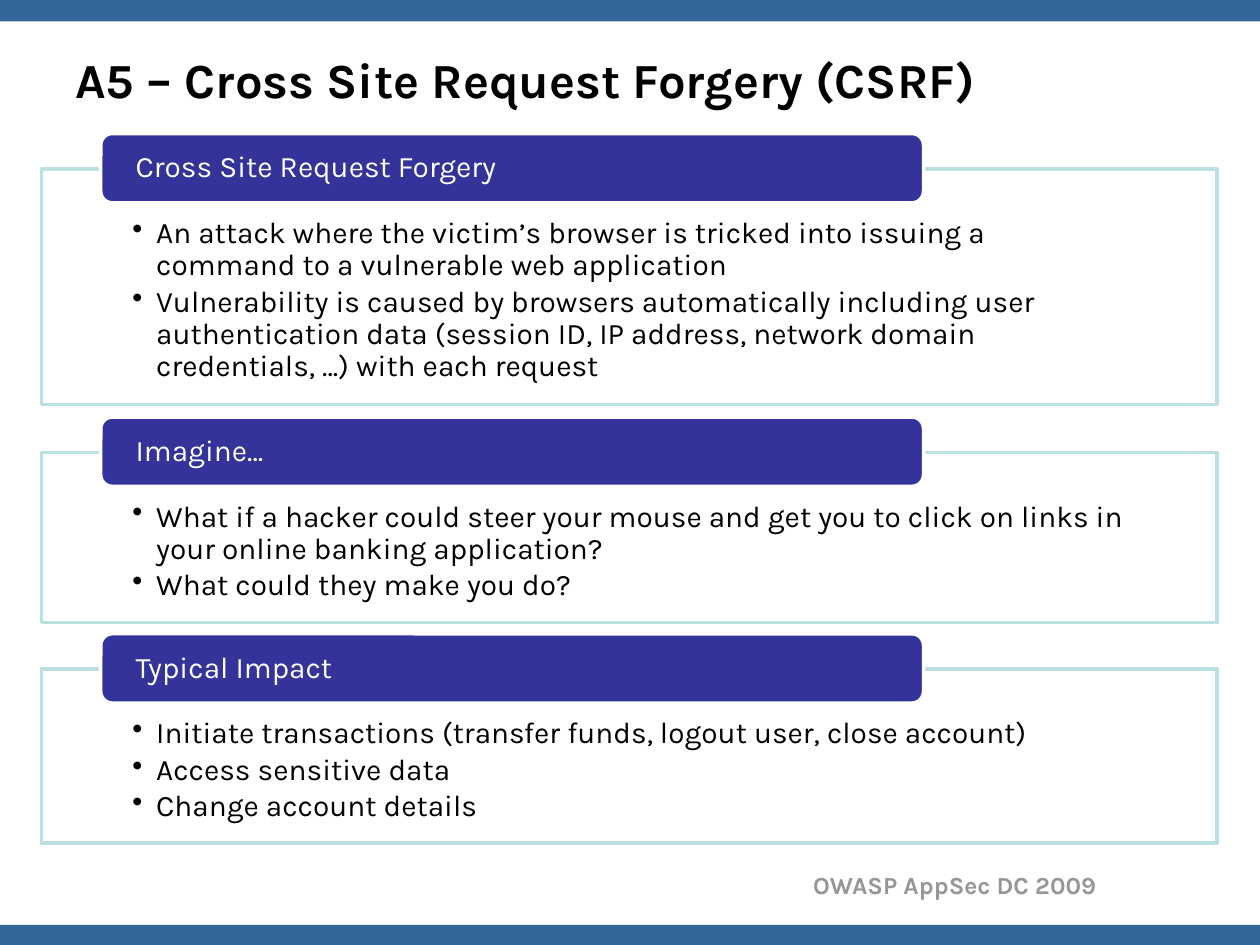
import pptx
import pptx.dml.color
import pptx.enum.shapes
import pptx.enum.text
import pptx.oxml.ns
import pptx.util
from lxml import etree
from pptx.util import Inches

RECT = pptx.enum.shapes.MSO_SHAPE.RECTANGLE
ROUNDED = pptx.enum.shapes.MSO_SHAPE.ROUNDED_RECTANGLE
TOP = pptx.enum.text.MSO_ANCHOR.TOP
MIDDLE = pptx.enum.text.MSO_ANCHOR.MIDDLE
LEFT = pptx.enum.text.PP_ALIGN.LEFT
RIGHT = pptx.enum.text.PP_ALIGN.RIGHT

SECTIONS = [
    # heading, top of the frame, height of the frame, points
    ("Cross Site Request Forgery", 1.34, 1.87, [
        "An attack where the victim’s browser is tricked into issuing a "
        "command to a vulnerable web application",
        "Vulnerability is caused by browsers automatically including user "
        "authentication data (session ID, IP address, network domain "
        "credentials, …) with each request",
    ]),
    ("Imagine…", 3.59, 1.35, [
        "What if a hacker could steer your mouse and get you to click on "
        "links in your online banking application?",
        "What could they make you do?",
    ]),
    ("Typical Impact", 5.31, 1.38, [
        "Initiate transactions (transfer funds, logout user, close account)",
        "Access sensitive data",
        "Change account details",
    ]),
]


def rgb(hex_color):
    return pptx.dml.color.RGBColor.from_string(hex_color)


class Deck:
    FONT = "Karla"
    BAND = "336699"
    FRAME = "BBE0E3"
    HEADING = "333399"
    WHITE = "FFFFFF"
    BLACK = "000000"
    GREY = "969696"

    def __init__(self, slide):
        self.slide = slide

    def box(self, kind, left, top, width, height, fill, line=None):
        shape = self.slide.shapes.add_shape(
            kind, Inches(left), Inches(top), Inches(width), Inches(height))
        shape.shadow.inherit = False
        shape.fill.solid()
        shape.fill.fore_color.rgb = rgb(fill)
        if line:
            shape.line.color.rgb = rgb(line)
            shape.line.width = pptx.util.Pt(2)
        else:
            shape.line.fill.background()
        return shape

    def prepare(self, shape, anchor, insets=(0.1, 0.05, 0.1, 0.05)):
        """Set wrapping, anchor and insets (left, top, right, bottom)."""
        frame = shape.text_frame
        frame.word_wrap = True
        frame.vertical_anchor = anchor
        (frame.margin_left, frame.margin_top,
         frame.margin_right, frame.margin_bottom) = map(Inches, insets)
        return frame

    def style(self, paragraph, size, color, bold=False, align=LEFT):
        paragraph.alignment = align
        paragraph.font.name = self.FONT
        paragraph.font.size = pptx.util.Pt(size)
        paragraph.font.bold = bold
        paragraph.font.color.rgb = rgb(color)

    def label(self, text, left, top, width, height, size, color,
              anchor=TOP, align=LEFT):
        area = self.slide.shapes.add_textbox(
            Inches(left), Inches(top), Inches(width), Inches(height))
        paragraph = self.prepare(area, anchor).paragraphs[0]
        paragraph.text = text
        self.style(paragraph, size, color, True, align)

    def bullet(self, paragraph):
        properties = paragraph._p.get_or_add_pPr()
        properties.set("marL", str(Inches(0.19)))
        properties.set("indent", str(-Inches(0.19)))
        etree.SubElement(properties, pptx.oxml.ns.qn("a:buChar"), char="•")

    def section(self, heading, top, height, points):
        """Draw a framed list with its heading bar over the top edge."""
        panel = self.box(RECT, 0.33, top, 9.33, height, self.WHITE, self.FRAME)
        frame = self.prepare(panel, TOP, (0.72, 0.39, 0.72, 0.13))
        for index, point in enumerate(points):
            paragraph = frame.add_paragraph() if index else frame.paragraphs[0]
            paragraph.text = point
            self.bullet(paragraph)
            paragraph.line_spacing = 0.9
            paragraph.space_after = pptx.util.Pt(2.5)
            self.style(paragraph, 17, self.BLACK)

        bar = self.box(ROUNDED, 0.8, top - 0.28, 6.53, 0.55,
                       self.HEADING, self.WHITE)
        title = self.prepare(bar, MIDDLE, (0.25, 0, 0.25, 0)).paragraphs[0]
        title.text = heading
        title.line_spacing = 0.9
        self.style(title, 17, self.WHITE)


def main():
    presentation = pptx.Presentation()
    presentation.slide_width = Inches(10)
    presentation.slide_height = Inches(7.5)
    deck = Deck(presentation.slides.add_slide(presentation.slide_layouts[6]))

    for band_top in (0, 7.34):
        deck.box(RECT, 0, band_top, 10, 0.17, deck.BAND)
    deck.label("OWASP AppSec DC 2009", 5.42, 6.86, 3.38, 0.34, 14, deck.GREY,
               align=RIGHT)
    deck.label("A5 – Cross Site Request Forgery (CSRF)", 0.5, 0.19, 9, 0.87,
               28, deck.BLACK, anchor=MIDDLE)
    for section in SECTIONS:
        deck.section(*section)

    presentation.save("out.pptx")


if __name__ == "__main__":
    main()
